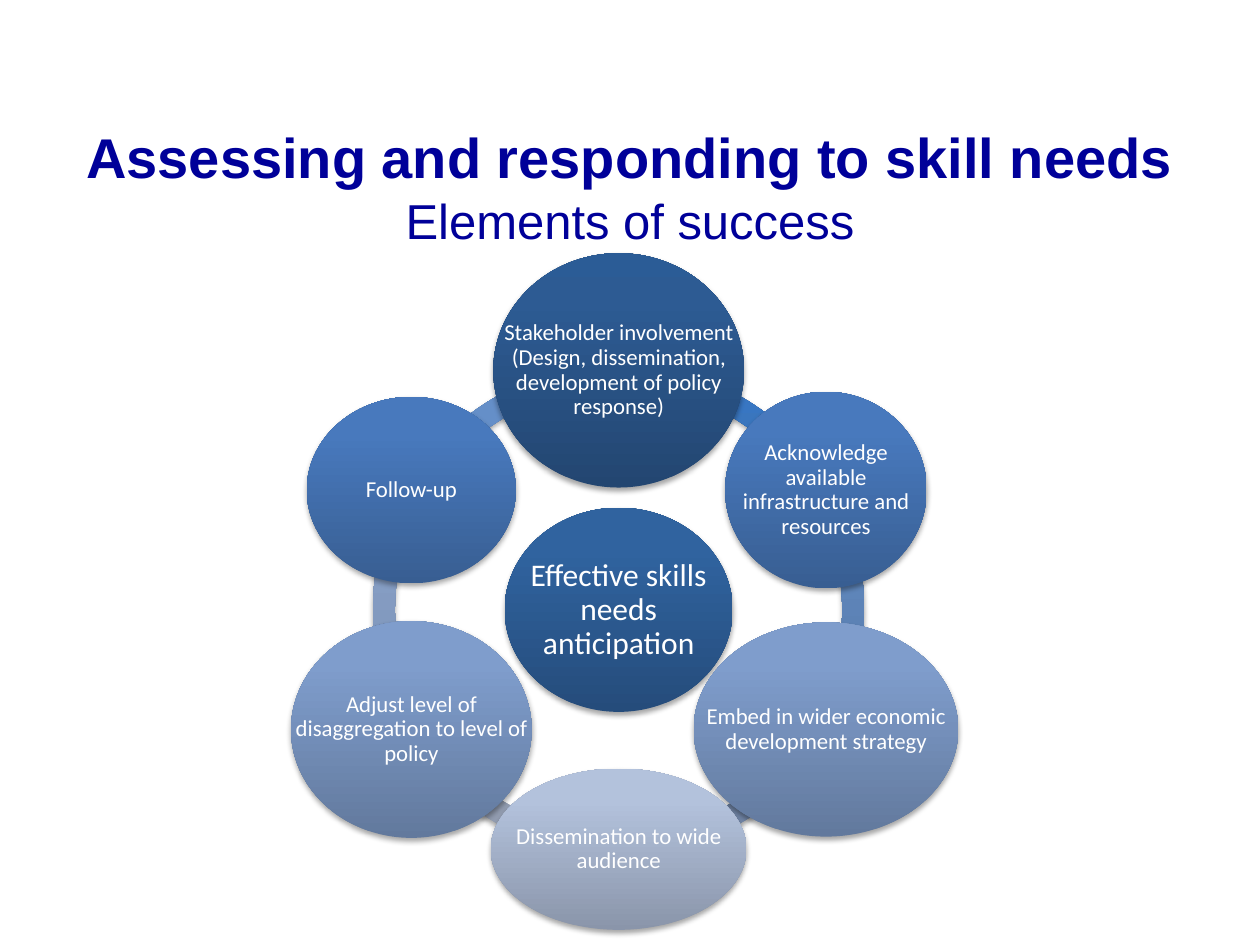
import math
from dataclasses import dataclass

import pptx
import pptx.dml.color
import pptx.enum.shapes
import pptx.enum.text
import pptx.oxml
import pptx.oxml.ns
import pptx.util

Inches = pptx.util.Inches
Pt = pptx.util.Pt
SHAPE = pptx.enum.shapes.MSO_SHAPE


@dataclass(frozen=True)
class Theme:
    navy: str = "000099"
    white: str = "FFFFFF"
    head: str = "Arial"
    body: str = "Calibri"
    title: int = 32
    under: int = 28
    core: int = 18
    node: int = 13
    hub: tuple = ("254C7B", "30639F", "2F63A2")
    deep: tuple = ("234671", "2D5B93", "2B5C96")
    mid: tuple = ("385E92", "4879BD", "467AC0")
    soft: tuple = ("62799D", "7F9DCC", "7E9DCE")
    pale: tuple = ("8A95AA", "B3C2DC", "B4C3DE")
    arc_deep: tuple = ("2D5B92", "3A76BE", "3876C2")
    arc_mid: tuple = ("4E6E9A", "658FC8", "648FCA")
    arc_soft: tuple = ("6E82A2", "8FA9D2", "8FAAD5")
    arc_pale: tuple = ("8E98AC", "B8C6DF", "B8C6E1")


class Board:
    def __init__(self, slide, theme):
        self.slide = slide
        self.theme = theme
        self.group = slide.shapes.add_group_shape()

    def style(self, item, form):
        for name, value in form.items():
            setattr(item, name, value)

    def shade(self, shape, tones):
        space = pptx.oxml.ns.nsdecls("a")
        stops = "".join(
            f'<a:gs pos="{place}"><a:srgbClr val="{tone}"/></a:gs>'
            for place, tone in zip((0, 80000, 100000), tones)
        )
        frame = shape._element.spPr
        frame.append(pptx.oxml.parse_xml(
            f'<a:gradFill {space} rotWithShape="1"><a:gsLst>{stops}</a:gsLst>'
            '<a:lin ang="16200000" scaled="0"/></a:gradFill>'
        ))
        shape.line.fill.background()
        frame.append(pptx.oxml.parse_xml(
            f'<a:effectLst {space}><a:outerShdw blurRad="{Pt(3.1)}" dist="{Pt(1.8)}" '
            'dir="5400000" rotWithShape="0"><a:srgbClr val="000000">'
            '<a:alpha val="35000"/></a:srgbClr></a:outerShdw></a:effectLst>'
        ))

    def text(self, shapes, place, lines, inset, form):
        frame = shapes.add_textbox(*map(Inches, place)).text_frame
        sides = {f"margin_{side}": Inches(gap) for side, gap in inset.items()}
        self.style(frame, {
            "word_wrap": True,
            "vertical_anchor": pptx.enum.text.MSO_ANCHOR.MIDDLE,
            **sides,
        })
        for count, (words, size, font, tone, bold) in enumerate(lines):
            para = frame.add_paragraph() if count else frame.paragraphs[0]
            self.style(para, {"alignment": pptx.enum.text.PP_ALIGN.CENTER, **form})
            run = para.add_run()
            run.text = words
            self.style(run.font, {"size": Pt(size), "name": font, "bold": bold})
            run.font.color.rgb = pptx.dml.color.RGBColor.from_string(tone)

    def title(self, place, head, under):
        look = self.theme
        self.text(self.slide.shapes, place, [
            (head, look.title, look.head, look.navy, True),
            (under, look.under, look.head, look.navy, False),
        ], {}, {})

    def arc(self, place, start, sweep, tones):
        shape = self.group.shapes.add_shape(SHAPE.BLOCK_ARC, *map(Inches, place))
        ends = (start, (start + sweep) % 360)
        for spot, angle in enumerate(ends):
            shape.adjustments[spot] = angle * 60000 / 100000
        shape.adjustments[2] = 0.045
        self.shade(shape, tones)

    def disc(self, mid, size, words, tones, points, gap):
        look = self.theme
        place = (mid[0] - size[0] / 2, mid[1] - size[1] / 2, *size)
        shape = self.group.shapes.add_shape(SHAPE.OVAL, *map(Inches, place))
        self.shade(shape, tones)
        inset = dict.fromkeys(("left", "top", "right", "bottom"), gap)
        self.text(self.group.shapes, place,
                  [(words, points, look.body, look.white, False)],
                  inset, {"line_spacing": 0.9})


def main():
    deck = pptx.Presentation()
    deck.slide_width, deck.slide_height = Inches(10), Inches(7.5)
    look = Theme()
    board = Board(deck.slides.add_slide(deck.slide_layouts[6]), look)
    board.title((0.5, 0.85, 9, 1.25),
                "Assessing and responding to skill needs", "Elements of success")

    hub = (4.91, 4.84)
    ring, orbit = 3.9, 1.9
    nodes = [
        ("Stakeholder involvement (Design, dissemination, development of policy response)",
         (1.99, 1.86), look.deep, look.arc_deep),
        ("Acknowledge available infrastructure and resources",
         (1.6, 1.56), look.mid, look.arc_mid),
        ("Embed in wider economic development strategy",
         (2.1, 1.7), look.soft, look.arc_soft),
        ("Dissemination to wide audience",
         (2.03, 1.28), look.pale, look.arc_pale),
        ("Adjust level of disaggregation to level of policy",
         (1.91, 1.72), look.soft, look.arc_soft),
        ("Follow-up", (1.66, 1.48), look.mid, look.arc_mid),
    ]
    sweep = 360 // len(nodes)
    angles = [(270 + sweep * count) % 360 for count in range(len(nodes))]
    box = (hub[0] - ring / 2, hub[1] - ring / 2, ring, ring)
    for angle, node in reversed(list(zip(angles, nodes))):
        board.arc(box, angle, sweep, node[3])

    board.disc(hub, (1.81, 1.62), "Effective skills needs anticipation",
               look.hub, look.core, 0.03)
    for angle, (words, size, tones, _) in zip(angles, nodes):
        turn = math.radians(angle)
        mid = (hub[0] + orbit * math.cos(turn), hub[1] + orbit * math.sin(turn))
        board.disc(mid, size, words, tones, look.node, 0.02)
    deck.save("out.pptx")


if __name__ == "__main__":
    main()
